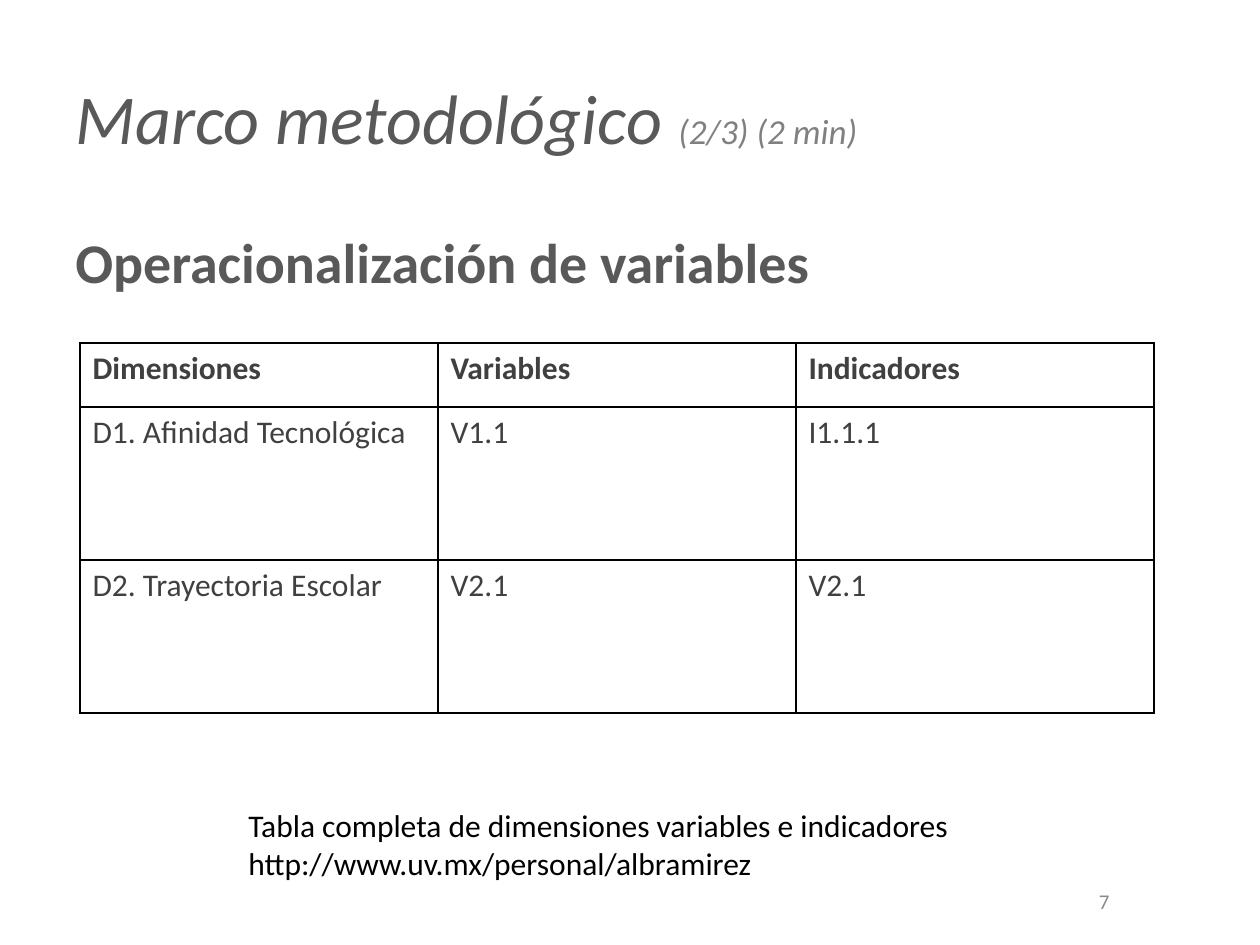
from lxml.etree import SubElement
from pptx import Presentation
from pptx.dml.color import RGBColor
from pptx.enum.text import MSO_ANCHOR, PP_ALIGN
from pptx.oxml import parse_xml
from pptx.oxml.ns import nsdecls
from pptx.util import Emu, Pt

SCALE = 914400 / 126  # EMU in one px
DARK, GREY, BLACK = "595959", "808080", "000000"
INK, PALE = "404040", "8C8C8C"


def px(n):
    return Emu(round(n * SCALE))


def color(code):
    return RGBColor.from_string(code)


class Deck:
    font = "Calibri"

    def __init__(self, wide, high):
        self.prs = Presentation()
        self.prs.slide_width, self.prs.slide_height = px(wide), px(high)
        self.slide = self.prs.slides.add_slide(self.prs.slide_layouts[5])

    def run(self, para, text, tint, **style):
        run = para.add_run()
        run.text = text
        run.font.name = self.font
        run.font.color.rgb = color(tint)
        for name, value in style.items():
            setattr(run.font, name, value)

    def title(self, box, parts):
        shape = self.slide.shapes.title
        for name, value in zip(("left", "top", "width", "height"), box):
            setattr(shape, name, px(value))
        frame = shape.text_frame
        frame.vertical_anchor = MSO_ANCHOR.MIDDLE
        para = frame.paragraphs[0]
        para.alignment = PP_ALIGN.LEFT
        for text, tint, size in parts:
            self.run(para, text, tint, size=Pt(size), italic=True)

    def text(self, box, lines, tint, size, bold=False, wrap=True,
             align=PP_ALIGN.LEFT, anchor=MSO_ANCHOR.TOP):
        frame = self.slide.shapes.add_textbox(*map(px, box)).text_frame
        frame.word_wrap = wrap
        frame.vertical_anchor = anchor
        for i, line in enumerate(lines):
            para = frame.add_paragraph() if i else frame.paragraphs[0]
            para.alignment = align
            self.run(para, line, tint, size=Pt(size), bold=bold)

    def border(self, cell):
        props = cell._tc.get_or_add_tcPr()
        for i, side in enumerate("LRTB"):
            line = parse_xml(f'<a:ln{side} w="{Pt(1)}" {nsdecls("a")}/>')
            space = line.nsmap["a"]
            fill = SubElement(line, f"{{{space}}}solidFill")
            SubElement(fill, f"{{{space}}}srgbClr", val=BLACK)
            props.insert(i, line)

    def table(self, left, top, col, highs, rows):
        box = map(px, (left, top, col * len(rows[0]), sum(highs)))
        table = self.slide.shapes.add_table(len(rows), len(rows[0]), *box).table
        table.first_row = table.horz_banding = False
        for column in table.columns:
            column.width = px(col)
        for r, row in enumerate(rows):
            table.rows[r].height = px(highs[r])
            for c, text in enumerate(row):
                cell = table.cell(r, c)
                cell.fill.background()
                self.border(cell)
                self.run(cell.text_frame.paragraphs[0], text, INK,
                         size=Pt(18), bold=r == 0)


def main():
    deck = Deck(1260, 945)

    # Headings
    deck.title((63, 38, 1134, 157), [("Marco metodológico ", DARK, 40),
                                     ("(2/3) (2 min)", GREY, 20)])
    deck.text((63, 221, 1134, 74), ["Operacionalización de variables"],
              DARK, 32, bold=True)

    # Dimensions, variables and indicators
    deck.table(80, 343, 358, (64, 153, 153), [
        ("Dimensiones", "Variables", "Indicadores"),
        ("D1. Afinidad Tecnológica", "V1.1", "I1.1.1"),
        ("D2. Trayectoria Escolar", "V2.1", "V2.1"),
    ])

    # Link note and slide number
    deck.text((236, 800, 733, 89),
              ["Tabla completa de dimensiones variables e indicadores",
               "http://www.uv.mx/personal/albramirez"],
              BLACK, 18, wrap=False)
    deck.text((903, 876, 219, 50), ["7"], PALE, 12,
              align=PP_ALIGN.RIGHT, anchor=MSO_ANCHOR.MIDDLE)

    deck.prs.save("out.pptx")


if __name__ == "__main__":
    main()
